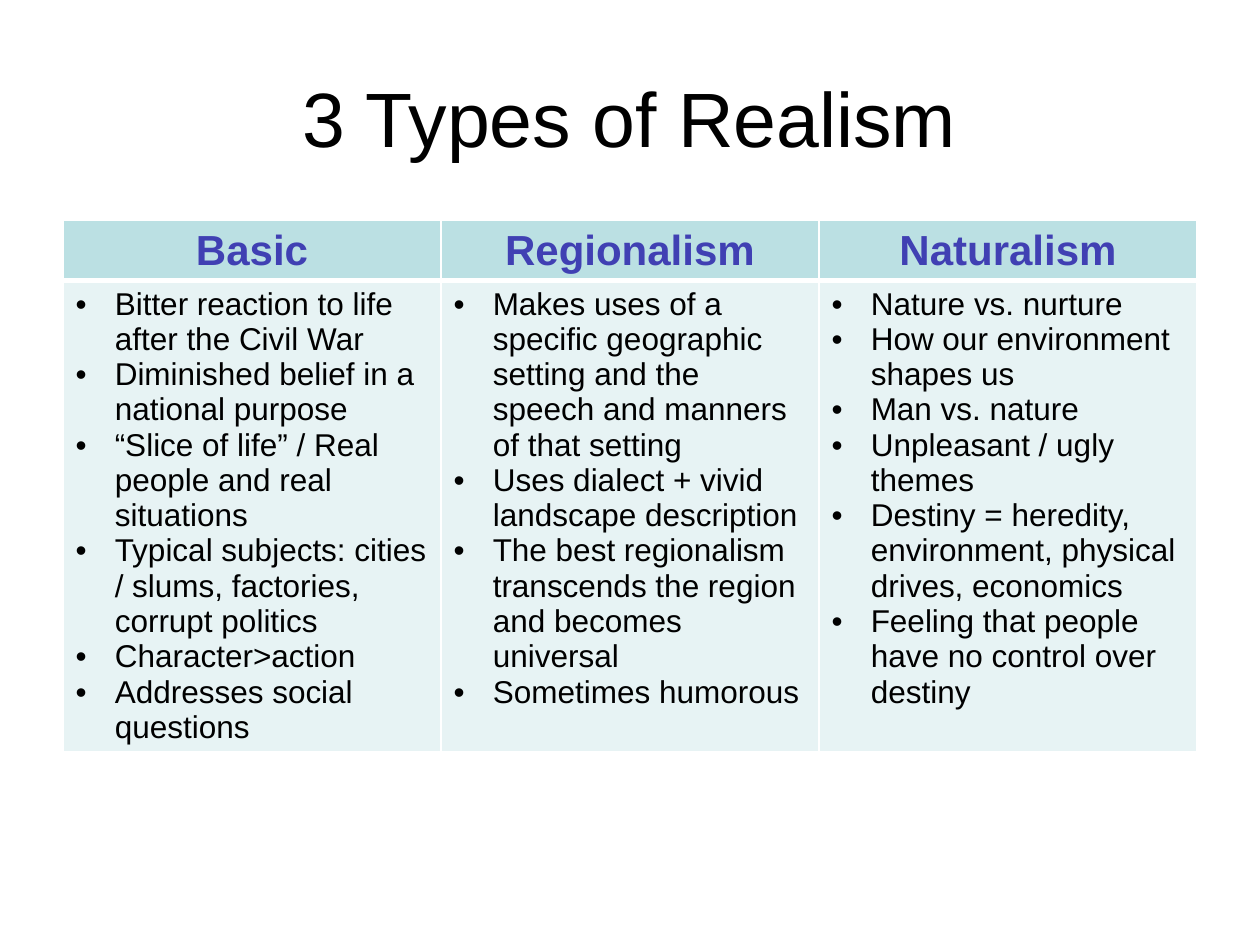
from lxml import etree
from pptx import Presentation
from pptx import util as u
from pptx.dml.color import RGBColor
from pptx.enum import text
from pptx.oxml import parse_xml
from pptx.oxml.ns import nsdecls, qn

TITLE = "3 Types of Realism"
COLUMNS = {
    "Basic": [
        "Bitter reaction to life after the Civil War",
        "Diminished belief in a national purpose",
        "“Slice of life” / Real people and real situations",
        "Typical subjects: cities / slums, factories, corrupt politics",
        "Character>action",
        "Addresses social questions",
    ],
    "Regionalism": [
        "Makes uses of a specific geographic setting and the speech and manners of that setting",
        "Uses dialect + vivid landscape description",
        "The best regionalism transcends the region and becomes universal",
        "Sometimes humorous",
    ],
    "Naturalism": [
        "Nature vs. nurture",
        "How our environment shapes us",
        "Man vs. nature",
        "Unpleasant / ugly themes",
        "Destiny = heredity, environment, physical drives, economics",
        "Feeling that people have no control over destiny",
    ],
}
THEME = {
    "font": "Arial",
    "ink": "000000",
    "line": "FFFFFF",
    "head_fill": "BBE0E3",
    "body_fill": "E7F3F4",
    "head_stops": [(0, "00005B"), (78, "4040B3"), (100, "EFEFF7")],
    "title": 44,
    "head": 24,
    "body": 18,
}
LEFT, WIDTH = u.Cm(1.27), u.Cm(22.86)
TITLE_BOX = {"left": LEFT, "top": u.Cm(0.76), "width": WIDTH, "height": u.Cm(3.18)}
TABLE_TOP = u.Cm(4.45)
ROW_HEIGHTS = [u.Cm(1.17), u.Cm(9.48)]
INDENT = u.Cm(0.79)


def set_all(obj, values):
    for name, value in values.items():
        setattr(obj, name, value)


def write(p, words, size, bold=False):
    r = p.add_run()
    r.text = words
    set_all(r.font, {"name": THEME["font"], "size": u.Pt(size), "bold": bold})
    r.font.color.rgb = RGBColor.from_string(THEME["ink"])
    return r


def gradient(r):
    stops = "".join(
        f'<a:gs pos="{pos * 1000}"><a:srgbClr val="{color}"/></a:gs>'
        for pos, color in THEME["head_stops"]
    )
    solid = r.font._element.find(qn("a:solidFill"))
    solid.getparent().replace(solid, parse_xml(
        f'<a:gradFill {nsdecls("a")}><a:gsLst>{stops}</a:gsLst>'
        '<a:lin ang="5400000" scaled="0"/></a:gradFill>'))


def bullet(p):
    pPr = p._p.get_or_add_pPr()
    pPr.set("marL", str(INDENT))
    pPr.set("indent", str(-INDENT))
    etree.SubElement(pPr, qn("a:buFont")).set("typeface", THEME["font"])
    etree.SubElement(pPr, qn("a:buChar")).set("char", "•")


def style_cell(cell, fill, top, bottom):
    tcPr = cell._tc.get_or_add_tcPr()
    for side, width in (("L", 1), ("R", 1), ("T", top), ("B", bottom)):
        tcPr.append(parse_xml(
            f'<a:ln{side} {nsdecls("a")} w="{u.Pt(width)}"><a:solidFill>'
            f'<a:srgbClr val="{THEME["line"]}"/></a:solidFill></a:ln{side}>'))
    cell.fill.solid()
    cell.fill.fore_color.rgb = RGBColor.from_string(fill)


prs = Presentation()
set_all(prs, {"slide_width": u.Cm(25.4), "slide_height": u.Cm(19.05)})
s = prs.slides.add_slide(prs.slide_layouts[5])

sp = s.shapes.title
set_all(sp, TITLE_BOX)
sp.text_frame.vertical_anchor = text.MSO_ANCHOR.MIDDLE
p = sp.text_frame.paragraphs[0]
p.alignment = text.PP_ALIGN.CENTER
write(p, TITLE, THEME["title"])

table = s.shapes.add_table(
    2, len(COLUMNS), LEFT, TABLE_TOP, WIDTH, sum(ROW_HEIGHTS)).table
for row, height in zip(table.rows, ROW_HEIGHTS):
    row.height = height

for i, (heading, points) in enumerate(COLUMNS.items()):
    table.columns[i].width = WIDTH // len(COLUMNS)
    head, body = table.cell(0, i), table.cell(1, i)
    style_cell(head, THEME["head_fill"], 1, 3)
    style_cell(body, THEME["body_fill"], 3, 1)
    p = head.text_frame.paragraphs[0]
    p.alignment = text.PP_ALIGN.CENTER
    gradient(write(p, heading, THEME["head"], True))
    tf = body.text_frame
    for j, point in enumerate(points):
        p = tf.add_paragraph() if j else tf.paragraphs[0]
        bullet(p)
        write(p, point, THEME["body"])

prs.save("out.pptx")
